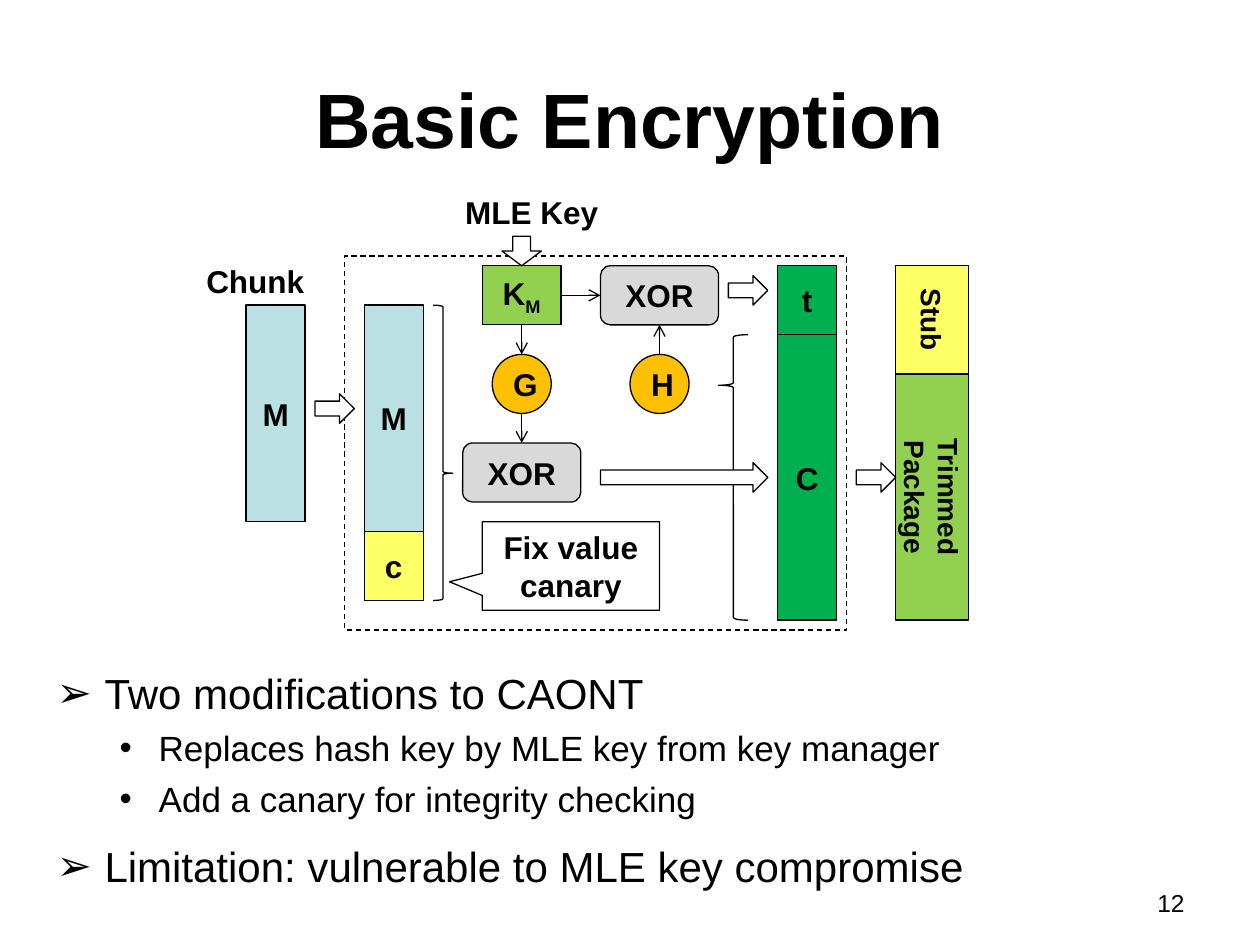
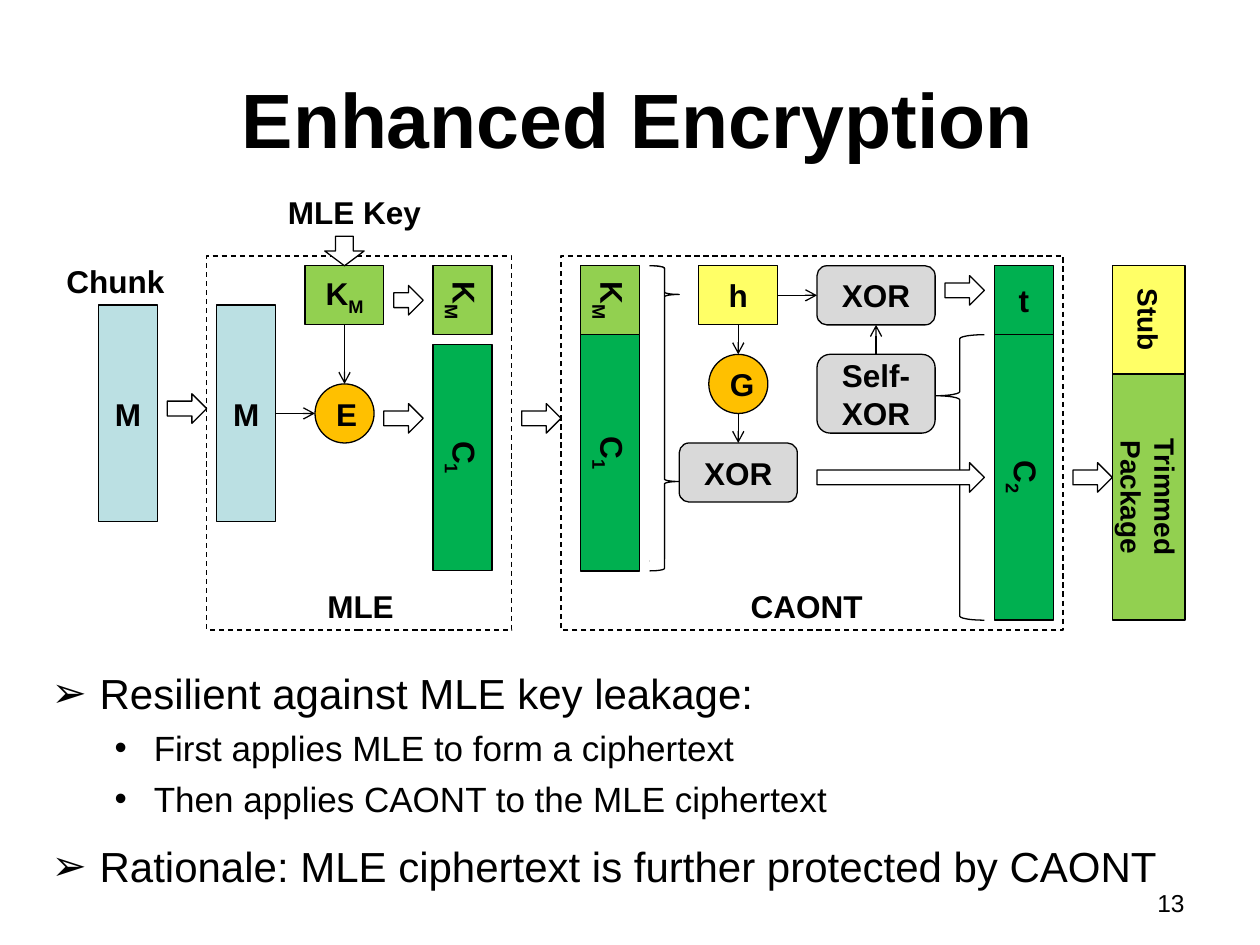
from lxml.etree import SubElement
from pptx import Presentation
from pptx.dml.color import RGBColor
from pptx.enum.dml import MSO_LINE
from pptx.enum.shapes import MSO_CONNECTOR, MSO_SHAPE
from pptx.enum.text import MSO_ANCHOR, PP_ALIGN
from pptx.oxml.ns import qn
from pptx.util import Emu, Inches, Pt

FONT = "Arial"
BLACK, WHITE, GREY = "000000", "FFFFFF", "D9D9D9"
BLUE, YELLOW, ORANGE = "BBE0E3", "FFFF66", "FFC000"
LIME, GREEN = "92D050", "00B050"
COLS, ROWS = 128, 96
WIDE, HIGH = Inches(10), Inches(7.5)
TOP, LEFT, BOTTOM, RIGHT = range(4)


def color(code):
    return RGBColor.from_string(code)


def place(x, y, w, h):
    return (Emu(round(x * WIDE / COLS)), Emu(round(y * HIGH / ROWS)),
            Emu(round(w * WIDE / COLS)), Emu(round(h * HIGH / ROWS)))


def style(para, size, bold=False, align=None):
    para.font.name = FONT
    para.font.size = Pt(size)
    para.font.bold = bold
    para.font.color.rgb = color(BLACK)
    para.alignment = align


def write(para, text):
    base, mark, sub = text.partition("_")
    para.add_run().text = base
    if mark:
        run = para.add_run()
        run.text = sub
        run.font._element.set("baseline", "-25000")


def stroke(line):
    line.color.rgb = color(BLACK)
    line.width = Pt(0.75)


def block(slide, kind, box, fill=WHITE, text="", size=18, turn=False, adjust=()):
    shape = slide.shapes.add_shape(kind, *place(*box))
    shape.shadow.inherit = False
    if fill:
        shape.fill.solid()
        shape.fill.fore_color.rgb = color(fill)
    else:
        shape.fill.background()
    stroke(shape.line)
    for i, value in enumerate(adjust):
        shape.adjustments[i] = value
    if text:
        para = shape.text_frame.paragraphs[0]
        write(para, text)
        style(para, size, True, PP_ALIGN.CENTER)
    if turn:
        shape.text_frame._txBody.bodyPr.set("vert", "vert")
    return shape


def rect(slide, box, fill, text, **more):
    return block(slide, MSO_SHAPE.RECTANGLE, box, fill, text, **more)


def pill(slide, x, y, text, h=6):
    return block(slide, MSO_SHAPE.ROUNDED_RECTANGLE, (x, y, 12, h), GREY, text)


def disc(slide, x, y, text):
    return block(slide, MSO_SHAPE.OVAL, (x, y, 6, 6), ORANGE, text)


def arrow(slide, x, y, w=4):
    block(slide, MSO_SHAPE.RIGHT_ARROW, (x, y, w, 3))


def frame(slide, x, w):
    block(slide, MSO_SHAPE.RECTANGLE, (x, 26, w, 38), None).line.dash_style = MSO_LINE.DASH


def label(slide, x, y, w, text, size=18, bold=True, align=None):
    area = slide.shapes.add_textbox(*place(x, y, w, 5)).text_frame
    area.word_wrap = True
    para = area.paragraphs[0]
    write(para, text)
    style(para, size, bold, align)


def middle(shape, side):
    dx, dy = [(0.5, 0), (0, 0.5), (0.5, 1), (1, 0.5)][side]
    return (Emu(round(shape.left + dx * shape.width)),
            Emu(round(shape.top + dy * shape.height)))


def link(slide, start, out, end, into):
    line = slide.shapes.add_connector(
        MSO_CONNECTOR.STRAIGHT, *middle(start, out), *middle(end, into))
    stroke(line.line)
    SubElement(line.line._get_or_add_ln(), qn("a:tailEnd"), type="arrow")
    SubElement(line._element.spPr, qn("a:effectLst"))
    if start.auto_shape_type != MSO_SHAPE.OVAL:
        line.begin_connect(start, out)
    if end.auto_shape_type != MSO_SHAPE.OVAL:
        line.end_connect(end, into)


def chunk(slide, x, name):
    label(slide, name, 26, 14, "Chunk")
    rect(slide, (x, 31, 6, 22), BLUE, "M")
    arrow(slide, x + 7, 40)


def key(slide, x):
    label(slide, x - 3, 19, 18, "MLE Key")
    block(slide, MSO_SHAPE.DOWN_ARROW, (x + 2, 24, 4, 3), adjust=(0.449, 0.5))


def stage(slide, x, seed, hue, cipher, brace, tip, turn=False):
    frame(slide, x, 51)
    first = rect(slide, (x + 14, 27, 8, 6), hue, seed)
    mask = disc(slide, x + 15, 36, "G")
    low = pill(slide, x + 12, 45, "XOR")
    high = pill(slide, x + 26, 27, "XOR")
    link(slide, first, BOTTOM, mask, TOP)
    link(slide, mask, BOTTOM, low, TOP)
    link(slide, first, RIGHT, high, LEFT)
    rect(slide, (x + 44, 34, 6, 29), GREEN, cipher, turn=turn)
    rect(slide, (x + 44, 27, 6, 7), GREEN, "t")
    block(slide, MSO_SHAPE.LEFT_BRACE, (x + brace[0], 34, brace[1], 29), adjust=(0.083, tip))
    arrow(slide, x + 26, 47, 17)
    arrow(slide, x + 39, 28)
    rect(slide, (x + 56, 27, 7.4, 11), YELLOW, "Stub", size=16, turn=True)
    rect(slide, (x + 56, 38, 7.4, 25), LIME, "Trimmed Package", size=16, turn=True)
    arrow(slide, x + 52, 47)
    return high


def bullets(slide, x, items):
    area = slide.shapes.add_textbox(*place(x, 67.2, 120.6, 28)).text_frame
    area.word_wrap = True
    for i, (level, text) in enumerate(items):
        para = area.paragraphs[0] if i == 0 else area.add_paragraph()
        write(para, text)
        style(para, (24, 20)[level])
        para.level = level
        para.space_before = Pt((12, 5)[level] if i else 0)
        props = para._p.get_or_add_pPr()
        props.set("marL", str(Inches((0.38, 0.81)[level])))
        props.set("indent", str(-Inches((0.38, 0.31)[level])))
        SubElement(props, qn("a:buFont"), typeface=FONT)
        SubElement(props, qn("a:buChar"), char="➢•"[level])


def page(deck, title, x, w, number):
    slide = deck.slides.add_slide(deck.slide_layouts[5])
    head = slide.shapes.title
    head.left, head.top, head.width, head.height = place(x, 4, w, 16)
    head.text_frame.vertical_anchor = MSO_ANCHOR.MIDDLE
    head.text_frame.text = title
    style(head.text_frame.paragraphs[0], 44, True, PP_ALIGN.CENTER)
    label(slide, 91.8, 89.6, 29.8, number, 14, False, PP_ALIGN.RIGHT)
    return slide


def basic(deck):
    slide = page(deck, "Basic Encryption", 6.4, 115.2, "12")
    high = stage(slide, 35, "K_M", LIME, "C", (38, 3), 0.177)
    link(slide, disc(slide, 64, 36, "H"), TOP, high, BOTTOM)
    rect(slide, (37, 31, 6, 23), BLUE, "M")
    rect(slide, (37, 54, 6, 7), YELLOW, "c")
    block(slide, MSO_SHAPE.RIGHT_BRACE, (44, 31, 2, 30), adjust=(0.083, 0.569))
    note = block(slide, MSO_SHAPE.RECTANGULAR_CALLOUT, (49, 53, 18, 9),
                 text="Fix value canary", adjust=(-0.685, 0.179))
    note.text_frame.vertical_anchor = MSO_ANCHOR.TOP
    chunk(slide, 25, 19.7)
    key(slide, 49)
    bullets(slide, 4.5, [
        (0, "Two modifications to CAONT"),
        (1, "Replaces hash key by MLE key from key manager"),
        (1, "Add a canary for integrity checking"),
        (0, "Limitation: vulnerable to MLE key compromise")])


def better(deck):
    slide = page(deck, "Enhanced Encryption", 4, 121.6, "13")
    frame(slide, 21, 31)
    high = stage(slide, 57, "h", YELLOW, "C_2", (38, 5), 0.214, True)
    link(slide, pill(slide, 83, 36, "Self-XOR", 8), TOP, high, BOTTOM)
    for x, y in (44, 35), (59, 34):
        rect(slide, (x, y, 6, 58 - y), GREEN, "C_1", turn=True)
        rect(slide, (x, 27, 6, 7), LIME, "K_M", turn=True)
    for h, tip in (30, 0.097), (31, 0.707):
        block(slide, MSO_SHAPE.RIGHT_BRACE, (66, 27, 3, h), adjust=(0.083, tip))
    seed = rect(slide, (31, 27, 8, 6), LIME, "K_M")
    data = rect(slide, (22, 31, 6, 22), BLUE, "M")
    mix = disc(slide, 32, 39, "E")
    link(slide, data, RIGHT, mix, LEFT)
    link(slide, seed, BOTTOM, mix, TOP)
    for x, y, w in (40, 29, 3), (39, 41, 4), (53, 41, 4):
        arrow(slide, x, y, w)
    chunk(slide, 10, 5.5)
    key(slide, 31)
    label(slide, 32, 59, 13, "MLE")
    label(slide, 75, 59, 17, "CAONT")
    bullets(slide, 4, [
        (0, "Resilient against MLE key leakage:"),
        (1, "First applies MLE to form a ciphertext"),
        (1, "Then applies CAONT to the MLE ciphertext"),
        (0, "Rationale: MLE ciphertext is further protected by CAONT")])


def main():
    deck = Presentation()
    deck.slide_width, deck.slide_height = WIDE, HIGH
    basic(deck)
    better(deck)
    deck.save("out.pptx")


if __name__ == "__main__":
    main()
